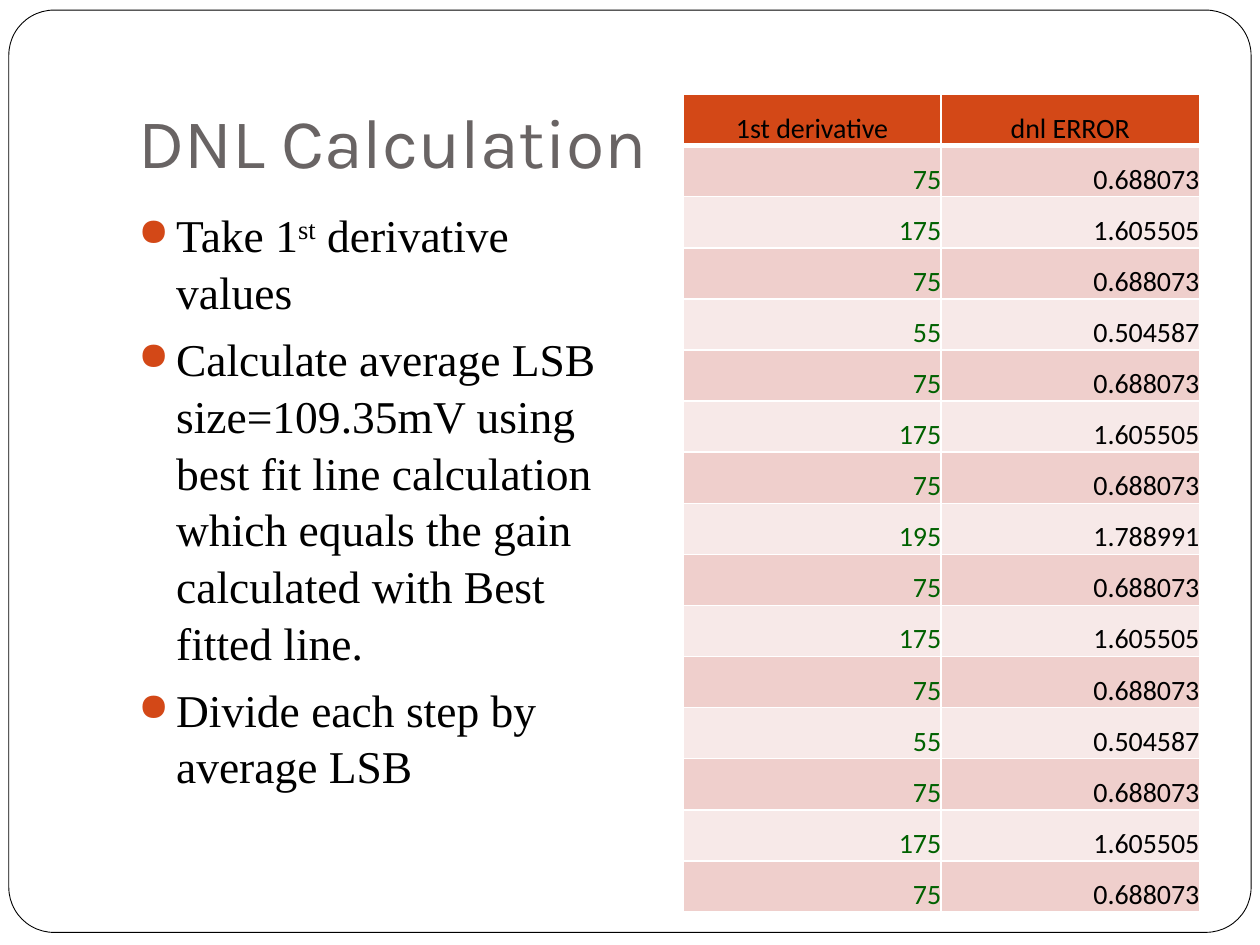
from pptx import Presentation
from pptx.dml.color import RGBColor
from pptx.enum.shapes import MSO_SHAPE
from pptx.enum.text import MSO_ANCHOR, PP_ALIGN
from pptx.oxml.ns import qn
from pptx.util import Inches, Pt
from lxml.etree import SubElement

STEPS = [75, 175, 75, 55, 75, 175, 75, 195, 75, 175, 75, 55, 75, 175, 75]
LSB = 109
POINTS = [
    [("Take 1", 0), ("st", 30), (" derivative values", 0)],
    [("Calculate average LSB size=109.35mV using best fit line calculation "
      "which equals the gain calculated with Best fitted line.", 0)],
    [("Divide each step by average LSB", 0)],
]


def color(text):
    return RGBColor.from_string(text)


def style(run, face, size, ink):
    run.font.name = face
    run.font.size = Pt(size)
    run.font.color.rgb = color(ink)


def add_frame(slide):
    box = slide.shapes.add_shape(
        MSO_SHAPE.ROUNDED_RECTANGLE,
        Inches(0.07), Inches(0.08), Inches(9.86), Inches(7.32))
    box.adjustments[0] = 0.049
    box.shadow.inherit = False
    box.fill.solid()
    box.fill.fore_color.rgb = color("FFFFFF")
    box.line.color.rgb = color("000000")
    box.line.width = Pt(0.5)


def add_box(slide, left, top, width, height):
    box = slide.shapes.add_textbox(
        Inches(left), Inches(top), Inches(width), Inches(height))
    frame = box.text_frame
    frame.word_wrap = True
    return frame


def add_title(slide):
    frame = add_box(slide, 1, 0.3, 8.5, 1.25)
    frame.vertical_anchor = MSO_ANCHOR.BOTTOM
    frame.margin_bottom = Inches(0.1)
    frame.text = "DNL Calculation"
    style(frame.paragraphs[0].runs[0], "Karla", 40, "696464")


def add_bullet(para):
    props = para._p.get_or_add_pPr()
    props.set("marL", str(Inches(0.3)))
    props.set("indent", str(Inches(-0.3)))
    tint = SubElement(props, qn("a:buClr"))
    SubElement(tint, qn("a:srgbClr"), val="D34817")
    SubElement(props, qn("a:buSzPct"), val="85000")
    SubElement(props, qn("a:buChar"), char="●")


def add_points(slide):
    frame = add_box(slide, 1, 1.58, 4.1, 5)
    for index, parts in enumerate(POINTS):
        para = frame.add_paragraph() if index else frame.paragraphs[0]
        para.space_before = Pt(5.8)
        para.line_spacing = 1.04
        add_bullet(para)
        for text, lift in parts:
            run = para.add_run()
            run.text = text
            style(run, "Times New Roman", 26, "000000")
            if lift:
                run.font._element.set("baseline", str(lift * 1000))


def add_edges(cell, base):
    props = cell._tc.get_or_add_tcPr()
    sides = [("a:lnL", 1), ("a:lnR", 1), ("a:lnT", 1), ("a:lnB", base)]
    for place, (tag, width) in enumerate(sides):
        line = SubElement(props, qn(tag), w=str(Pt(width)))
        fill = SubElement(line, qn("a:solidFill"))
        SubElement(fill, qn("a:srgbClr"), val="FFFFFF")
        props.insert(place, line)


def fill_cell(cell, text, ink, back, align, base=1):
    cell.margin_left = cell.margin_right = 0
    cell.margin_top = cell.margin_bottom = 0
    cell.vertical_anchor = MSO_ANCHOR.BOTTOM
    cell.fill.solid()
    cell.fill.fore_color.rgb = color(back)
    cell.text_frame.text = text
    para = cell.text_frame.paragraphs[0]
    para.alignment = align
    style(para.runs[0], "Calibri", 16, ink)
    add_edges(cell, base)


def add_grid(slide):
    table = slide.shapes.add_table(
        len(STEPS) + 1, 2,
        Inches(5.42), Inches(0.75), Inches(4.1), Inches(6.49)).table
    for col, text in enumerate(["1st derivative", "dnl ERROR"]):
        fill_cell(table.cell(0, col), text, "000000", "D34817",
                  PP_ALIGN.CENTER, 3)
    for row, step in enumerate(STEPS, 1):
        back = "EFCFCC" if row % 2 else "F7E9E8"
        pair = [(str(step), "006100"), (f"{step / LSB:.6f}", "000000")]
        for col, (text, ink) in enumerate(pair):
            fill_cell(table.cell(row, col), text, ink, back, PP_ALIGN.RIGHT,
                      1)


def main():
    deck = Presentation()
    deck.slide_width = Inches(10)
    deck.slide_height = Inches(7.5)
    slide = deck.slides.add_slide(deck.slide_layouts[6])
    add_frame(slide)
    add_title(slide)
    add_points(slide)
    add_grid(slide)
    deck.save("out.pptx")


if __name__ == "__main__":
    main()
